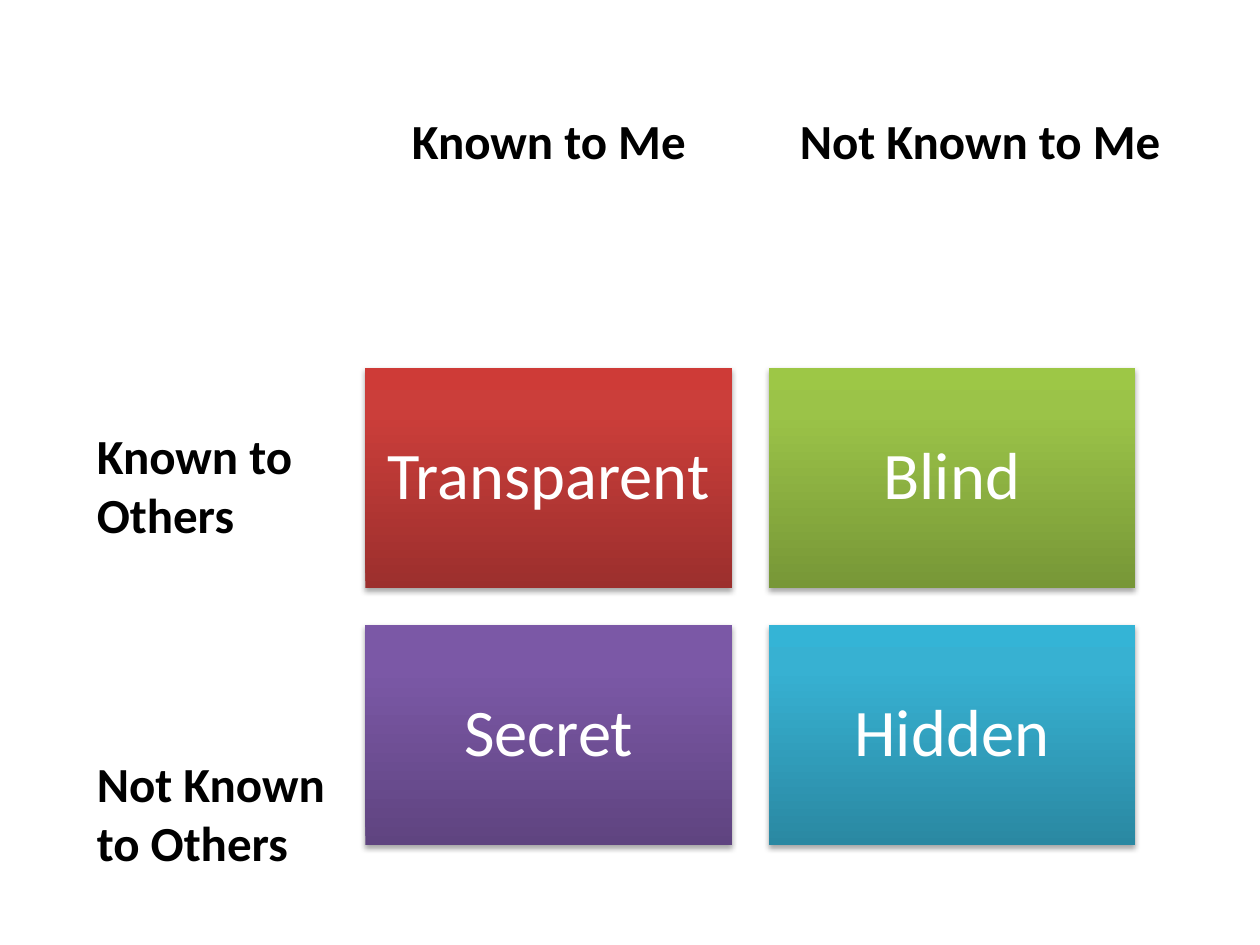
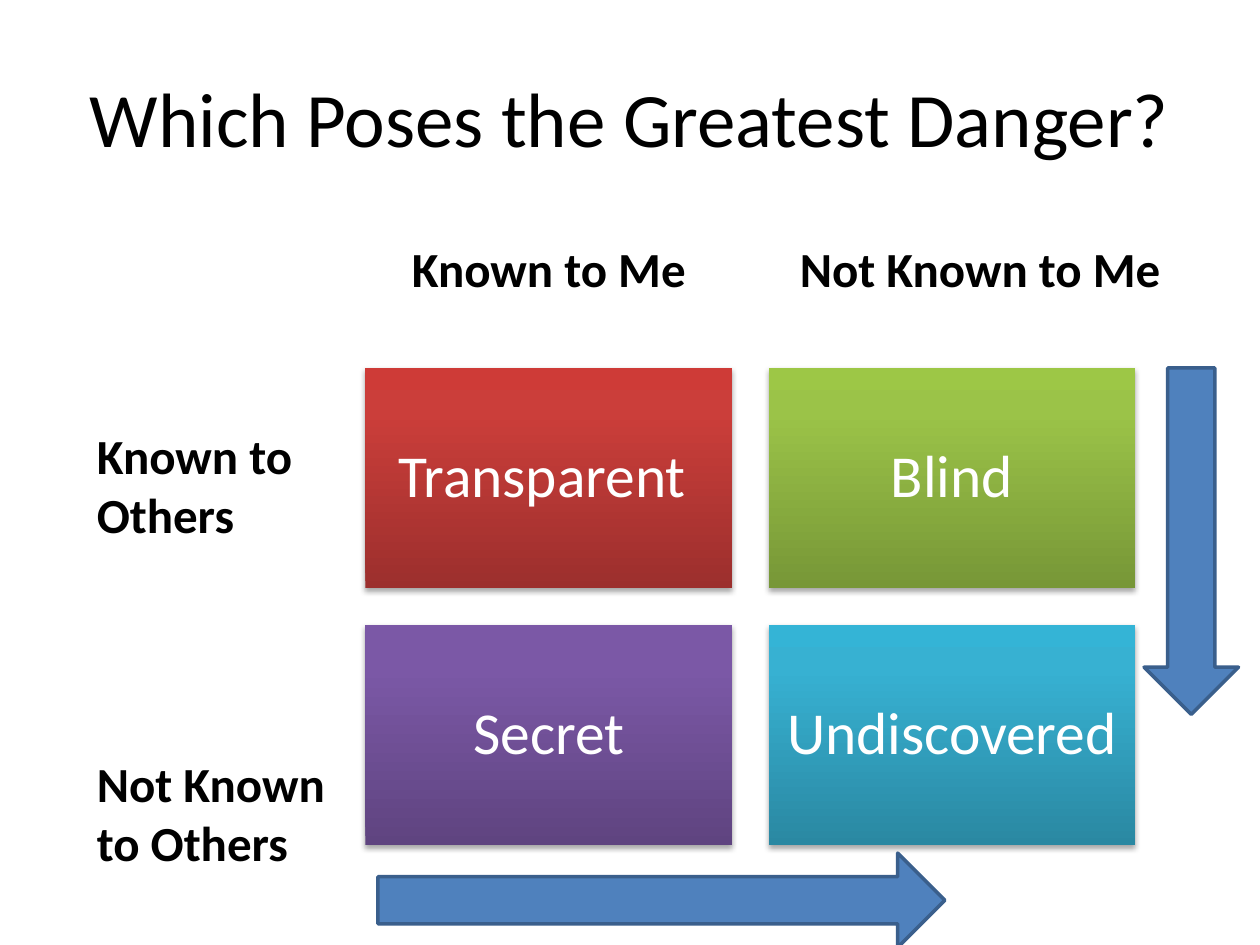
from copy import deepcopy

from pptx import Presentation
from pptx.dml.color import RGBColor
from pptx.enum.shapes import MSO_SHAPE
from pptx.enum.text import MSO_ANCHOR, MSO_AUTO_SIZE, PP_ALIGN
from pptx.oxml import parse_xml
from pptx.oxml.ns import nsdecls, qn
from pptx.util import Inches, Pt

FONT = "Calibri"
COLORS = {
    "text": "000000",
    "box_text": "FFFFFF",
    "shadow": "000000",
    "arrow": "4F81BD",
    "arrow_line": "3A5F8C",
    "red": ("9C2F2D", "CB3E3A", "CE3B37"),
    "green": ("779737", "9BC348", "9DC746"),
    "purple": ("5F4480", "7B58A6", "7C57A8"),
    "cyan": ("2A88A2", "37B1D2", "34B4D6"),
}
STOPS = (0, 0.8, 1)
BOX_COLORS = ("red", "green", "purple", "cyan")
BOX_LEFT, BOX_TOP = 2.9, 2.92
BOX_W, BOX_H = 2.91, 1.75
GAP = 0.29


def rgb(name):
    """Return the named palette colour."""
    return RGBColor.from_string(COLORS[name])


def write(tf, text, size=28, color="text", bold=False, align=PP_ALIGN.LEFT,
          anchor=MSO_ANCHOR.TOP, spacing=None, inset=None):
    """Fill a text frame, one paragraph per line of text."""
    tf.vertical_anchor = anchor
    if inset is not None:
        tf.margin_left = tf.margin_right = Inches(inset)
        tf.margin_top = tf.margin_bottom = Inches(inset)
    for i, line in enumerate(text.split("\n")):
        p = tf.add_paragraph() if i else tf.paragraphs[0]
        p.alignment = align
        if spacing:
            p.line_spacing = spacing
        r = p.add_run()
        r.text = line
        r.font.name = FONT
        r.font.size = Pt(size)
        r.font.bold = bold
        r.font.color.rgb = rgb(color)


def add_label(s, text, left, top, width, height):
    """Add a bold axis label that keeps its own line breaks."""
    tf = s.shapes.add_textbox(Inches(left), Inches(top), Inches(width), Inches(height)).text_frame
    tf.word_wrap = False
    tf.auto_size = MSO_AUTO_SIZE.SHAPE_TO_FIT_TEXT
    write(tf, text, bold=True)


def add_title(s, text):
    """Add the centred slide title."""
    tf = s.shapes.add_textbox(Inches(0.5), Inches(0.3), Inches(9), Inches(1.25)).text_frame
    tf.word_wrap = True
    write(tf, text, size=44, align=PP_ALIGN.CENTER, anchor=MSO_ANCHOR.MIDDLE)


def set_gradient(sp, colors):
    """Fill a shape with a three-stop gradient rising from the bottom."""
    sp.fill.gradient()
    sp.fill.gradient_angle = 90
    gs_lst = sp._element.spPr.find(qn("a:gradFill")).find(qn("a:gsLst"))
    gs_lst.append(deepcopy(gs_lst[0]))
    for stop, position, color in zip(sp.fill.gradient_stops, STOPS, colors):
        stop.position = position
        stop.color.rgb = RGBColor.from_string(color)


def set_shadow(sp):
    """Give a shape a soft shadow below it."""
    sp.shadow.inherit = False
    sp._element.spPr.find(qn("a:effectLst")).append(parse_xml(
        f'<a:outerShdw {nsdecls("a")} blurRad="{Pt(3.1)}" dist="{Pt(1.8)}" dir="5400000" '
        f'rotWithShape="0"><a:srgbClr val="{COLORS["shadow"]}">'
        '<a:alpha val="35000"/></a:srgbClr></a:outerShdw>'))


def add_box(s, text, row, col, color, size, inset):
    """Add one quadrant of the window."""
    sp = s.shapes.add_shape(
        MSO_SHAPE.RECTANGLE,
        Inches(BOX_LEFT + col * (BOX_W + GAP)), Inches(BOX_TOP + row * (BOX_H + GAP)),
        Inches(BOX_W), Inches(BOX_H))
    set_gradient(sp, COLORS[color])
    sp.line.fill.background()
    set_shadow(sp)
    write(sp.text_frame, text, size=size, color="box_text", align=PP_ALIGN.CENTER,
          anchor=MSO_ANCHOR.MIDDLE, spacing=0.9, inset=inset)


def add_arrow(s, kind, left, top, width, height):
    """Add a solid block arrow."""
    sp = s.shapes.add_shape(kind, Inches(left), Inches(top), Inches(width), Inches(height))
    sp.shadow.inherit = False
    sp.fill.solid()
    sp.fill.fore_color.rgb = rgb("arrow")
    sp.line.color.rgb = rgb("arrow_line")
    sp.line.width = Pt(2)


def add_window(s, names, header_top, size, inset):
    """Add the four quadrants with their column and row labels."""
    for i, (name, color) in enumerate(zip(names, BOX_COLORS)):
        add_box(s, name, *divmod(i, 2), color, size, inset)
    add_label(s, "Known to Me", 3.17, header_top, 2.4, 0.57)
    add_label(s, "Not Known to Me", 6.25, header_top, 3.1, 0.57)
    add_label(s, "Known to\nOthers", 0.67, 3.33, 1.86, 1.04)
    add_label(s, "Not Known\nto Others", 0.67, 5.93, 2.12, 1.04)


def main():
    """Build both slides and save them."""
    prs = Presentation()
    prs.slide_width, prs.slide_height = Inches(10), Inches(7.5)
    blank = prs.slide_layouts[6]

    s = prs.slides.add_slide(blank)
    add_window(s, ("Transparent ", "Blind", "Secret", "Hidden"), 0.83, size=38, inset=0.16)

    s = prs.slides.add_slide(blank)
    add_title(s, "Which Poses the Greatest Danger?")
    add_window(s, ("Transparent ", "Blind", "Secret", "Undiscovered"), 1.84, size=34, inset=0.14)
    add_arrow(s, MSO_SHAPE.DOWN_ARROW, 9.08, 2.92, 0.75, 2.75)
    add_arrow(s, MSO_SHAPE.RIGHT_ARROW, 3, 6.77, 4.5, 0.75)

    prs.save("out.pptx")


if __name__ == "__main__":
    main()
